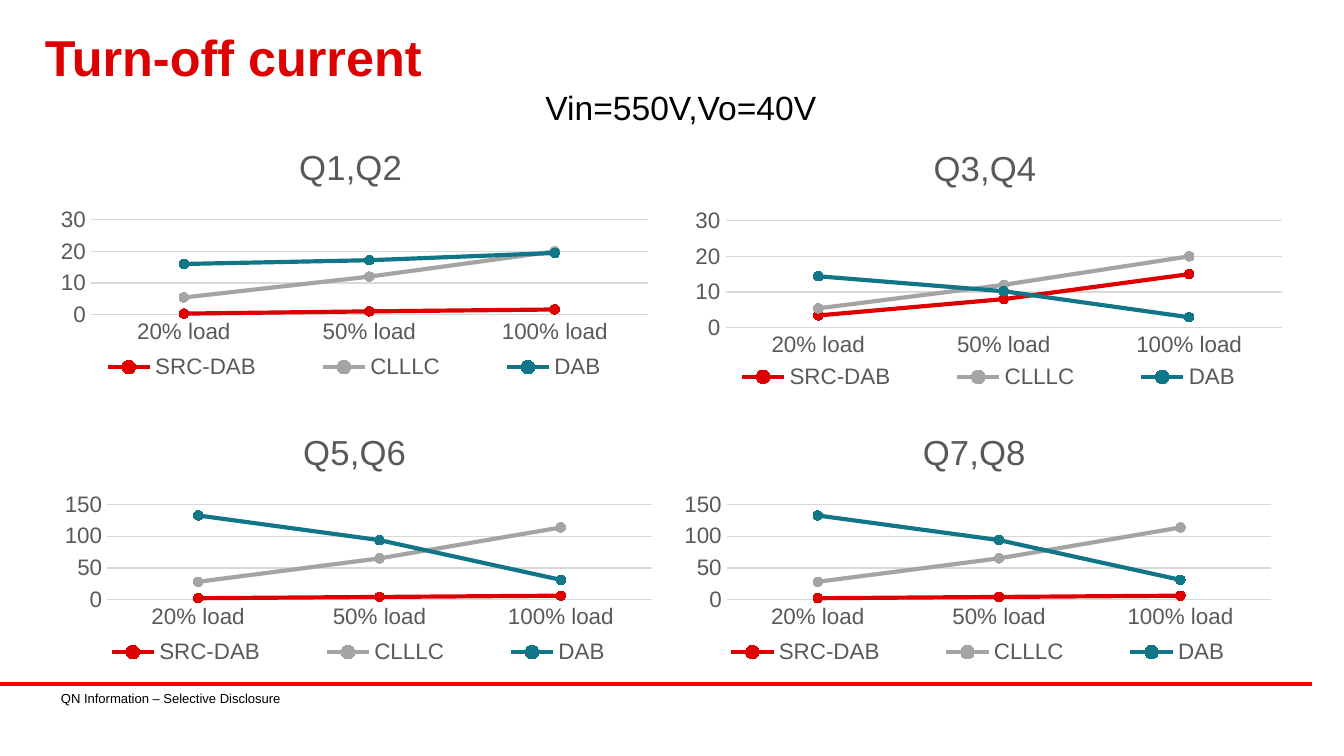
from dataclasses import dataclass

from lxml.etree import SubElement
from pptx import Presentation
from pptx.chart.data import CategoryChartData
from pptx.dml.color import RGBColor
from pptx.enum.chart import XL_CHART_TYPE, XL_LEGEND_POSITION, XL_MARKER_STYLE, XL_TICK_MARK
from pptx.enum.shapes import MSO_CONNECTOR
from pptx.enum.text import MSO_ANCHOR, MSO_AUTO_SIZE, PP_ALIGN
from pptx.oxml import parse_xml
from pptx.oxml.ns import nsdecls, qn
from pptx.util import Inches, Pt

FONT = "Arial"
RED = RGBColor(0xDE, 0x00, 0x00)
GRAY = RGBColor(0xA4, 0xA4, 0xA4)
TEAL = RGBColor(0x11, 0x77, 0x88)
RULE_RED = RGBColor(0xFF, 0x00, 0x00)
BLACK = RGBColor(0x00, 0x00, 0x00)
LABEL_GRAY = RGBColor(0x59, 0x59, 0x59)
GRID_GRAY = RGBColor(0xD9, 0xD9, 0xD9)

WIDTH = Inches(10)
HEIGHT = WIDTH * 9 // 16
LOADS = ("20% load", "50% load", "100% load")
TOPOLOGIES = {"SRC-DAB": RED, "CLLLC": GRAY, "DAB": TEAL}
SECONDARY_CURRENTS = ((2, 4, 6), (28, 65, 114), (133, 94, 31))
PRIMARY_CLLLC = (5.4, 12, 20)


@dataclass(frozen=True)
class Area:
    left: float
    top: float
    width: float
    height: float

    def box(self) -> tuple[int, int, int, int]:
        return (across(self.left), down(self.top), across(self.width), down(self.height))


@dataclass(frozen=True)
class SwitchPair:
    name: str
    area: Area
    plot: dict
    currents: tuple
    top_value: int
    step: int


TITLE_SPOT = dict(x=0.4, y=0.03)
LEGEND_SPOT = dict(x=0, y=0.84, w=1, h=0.12)
UPPER_LEFT_PLOT = dict(x=0.07, y=0.34, w=0.91, h=0.36)
UPPER_RIGHT_PLOT = dict(x=0.07, y=0.33, w=0.91, h=0.39)
LOWER_PLOT = dict(x=0.09, y=0.34, w=0.89, h=0.36)

PAIRS = (
    SwitchPair("Q1,Q2", Area(3.6, 17.24, 45.5, 34.84), UPPER_LEFT_PLOT,
               ((0.3, 1, 1.6), PRIMARY_CLLLC, (16, 17.2, 19.5)), 30, 10),
    SwitchPair("Q5,Q6", Area(3.9, 54.93, 45.5, 34.84), LOWER_PLOT,
               SECONDARY_CURRENTS, 150, 50),
    SwitchPair("Q3,Q4", Area(50.8, 17.24, 45.5, 36.27), UPPER_RIGHT_PLOT,
               ((3.4, 8, 15), PRIMARY_CLLLC, (14.4, 10.2, 2.9)), 30, 10),
    SwitchPair("Q7,Q8", Area(50, 54.93, 45.5, 34.84), LOWER_PLOT,
               SECONDARY_CURRENTS, 150, 50),
)


def across(percent: float) -> int:
    return round(WIDTH * percent / 100)


def down(percent: float) -> int:
    return round(HEIGHT * percent / 100)


def style_font(font, size: float, color: RGBColor, bold: bool = False) -> None:
    font.name = FONT
    font.size = Pt(size)
    font.bold = bold
    font.color.rgb = color


def write(frame, text: str, *, size: float, color: RGBColor, bold: bool = False,
          align=None, line_spacing=None) -> None:
    paragraph = frame.paragraphs[0]
    paragraph.alignment = align
    paragraph.line_spacing = line_spacing
    run = paragraph.add_run()
    run.text = text
    style_font(run.font, size, color, bold)


def set_insets(frame) -> None:
    frame.margin_left = frame.margin_right = Pt(6)
    frame.margin_top = frame.margin_bottom = Pt(3)


def place(part, spot: dict, index: int, **target: str) -> None:
    for old in part.findall(qn("c:layout")):
        part.remove(old)
    layout = parse_xml(f"<c:layout {nsdecls('c')}><c:manualLayout/></c:layout>")
    for tag, value in {**target, "xMode": "edge", "yMode": "edge", **spot}.items():
        SubElement(layout[0], qn(f"c:{tag}")).set("val", str(value))
    part.insert(index, layout)


def draw_chart(slide, pair: SwitchPair) -> None:
    data = CategoryChartData()
    data.categories = LOADS
    for topology, currents in zip(TOPOLOGIES, pair.currents):
        data.add_series(topology, currents)
    chart = slide.shapes.add_chart(XL_CHART_TYPE.LINE_MARKERS, *pair.area.box(), data).chart
    style_font(chart.font, 10, BLACK)

    chart.has_title = True
    write(chart.chart_title.text_frame, pair.name, size=18.6, color=LABEL_GRAY)
    chart.chart_title.include_in_layout = False
    chart.has_legend = True
    chart.legend.position = XL_LEGEND_POSITION.BOTTOM
    chart.legend.include_in_layout = False
    style_font(chart.legend.font, 12, LABEL_GRAY)

    loads, currents = chart.category_axis, chart.value_axis
    for axis in (loads, currents):
        axis.major_tick_mark = axis.minor_tick_mark = XL_TICK_MARK.NONE
        style_font(axis.tick_labels.font, 12, LABEL_GRAY)
    currents.minimum_scale, currents.maximum_scale = 0, pair.top_value
    currents.major_unit = pair.step
    currents.format.line.fill.background()
    for line in (loads.format.line, currents.major_gridlines.format.line):
        line.color.rgb = GRID_GRAY
        line.width = Pt(0.75)

    chart.plots[0].vary_by_categories = False
    for series, color in zip(chart.plots[0].series, TOPOLOGIES.values()):
        series.smooth = False
        series.format.line.color.rgb = color
        series.format.line.width = Pt(2.25)
        series.marker.style = XL_MARKER_STYLE.CIRCLE
        series.marker.size = 5
        series.marker.format.fill.solid()
        series.marker.format.fill.fore_color.rgb = color
        series.marker.format.line.color.rgb = color

    place(chart.plots[0]._element.getparent(), pair.plot, 0, layoutTarget="inner")
    place(chart.chart_title._element, TITLE_SPOT, 1)
    place(chart.legend._element, LEGEND_SPOT, 1)


def draw_footer(slide) -> None:
    rule = slide.shapes.add_connector(MSO_CONNECTOR.STRAIGHT, 0, down(90.49),
                                      across(97.6), down(90.49))
    rule.line.color.rgb = RULE_RED
    rule.line.width = Pt(2.25)
    SubElement(rule._element.spPr, qn("a:effectLst"))
    disclosure = slide.shapes.add_textbox(*Area(3.7, 90.55, 23.1, 3.56).box()).text_frame
    disclosure.word_wrap = True
    disclosure.auto_size = MSO_AUTO_SIZE.SHAPE_TO_FIT_TEXT
    set_insets(disclosure)
    write(disclosure, "QN Information – Selective Disclosure", size=7, color=BLACK)


def draw_headings(slide) -> None:
    title = slide.shapes.title
    title.left, title.top, title.width, title.height = Area(2.5, 2.13, 92.5, 11.91).box()
    title.text_frame.vertical_anchor = MSO_ANCHOR.MIDDLE
    set_insets(title.text_frame)
    write(title.text_frame, "Turn-off current", size=27, color=RED, bold=True,
          align=PP_ALIGN.LEFT, line_spacing=0.85)
    conditions = slide.shapes.add_textbox(*Area(39.6, 10.67, 22.4, 7.11).box()).text_frame
    conditions.word_wrap = False
    conditions.auto_size = MSO_AUTO_SIZE.SHAPE_TO_FIT_TEXT
    write(conditions, "Vin=550V,Vo=40V", size=18, color=BLACK)


def main() -> None:
    deck = Presentation()
    deck.slide_width, deck.slide_height = WIDTH, HEIGHT
    slide = deck.slides.add_slide(deck.slide_layouts[5])
    draw_footer(slide)
    draw_headings(slide)
    for pair in PAIRS:
        draw_chart(slide, pair)
    deck.save("out.pptx")


if __name__ == "__main__":
    main()
